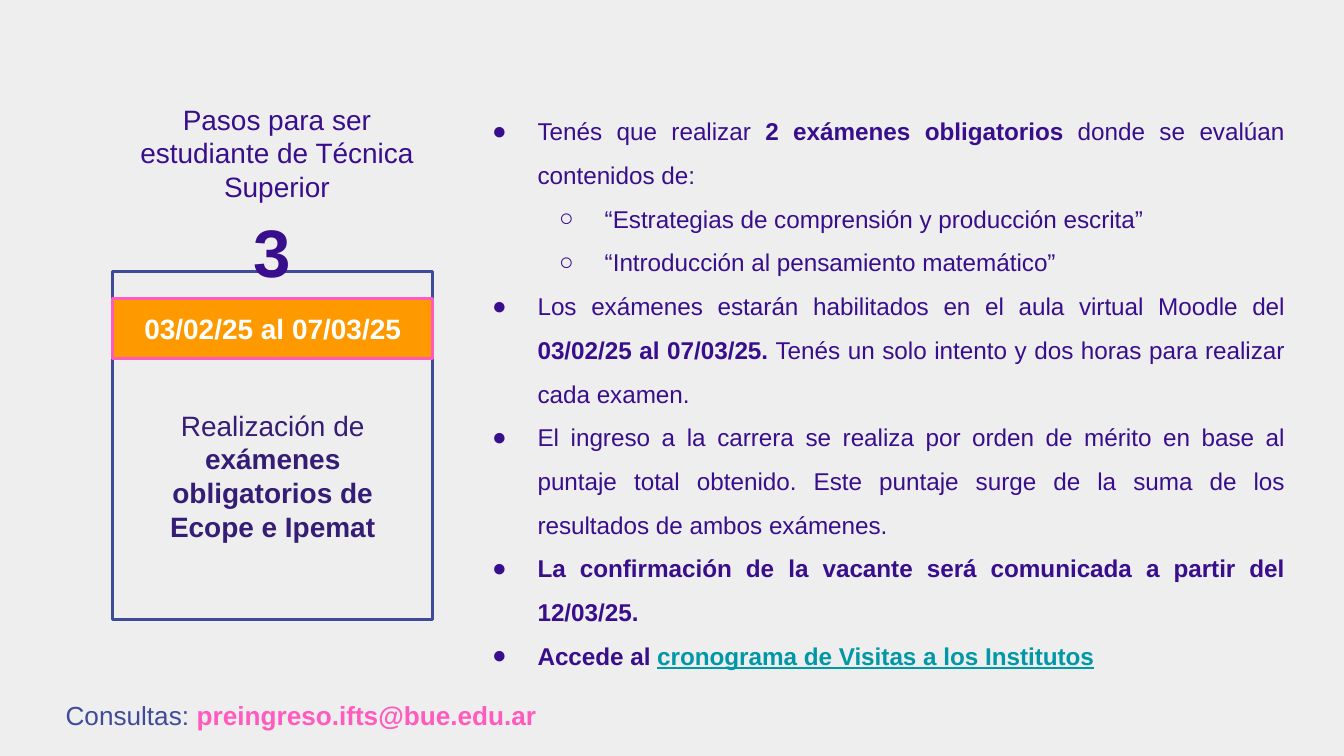
from dataclasses import dataclass

from lxml import etree
from pptx import Presentation
from pptx.dml.color import RGBColor
from pptx.enum import shapes, text
from pptx.oxml import ns
from pptx.util import Cm, Pt


@dataclass(frozen=True)
class Theme:
    font: str = "Arial"
    background: str = "EEEEEE"
    purple: str = "390E8C"
    violet: str = "351C75"
    blue: str = "3F4B99"
    pink: str = "FF5BBE"
    orange: str = "FF9900"
    teal: str = "0097A7"
    white: str = "FFFFFF"
    heading_size: float = 15
    body_size: float = 13
    contact_size: float = 14
    number_size: float = 36
    outline: float = 1.5


@dataclass(frozen=True)
class Box:
    """A region of the slide, in centimetres."""
    left: float
    top: float
    width: float
    height: float

    def inside(self, left, top, width, height):
        return Box(self.left + left, self.top + top, width, height)

    def lengths(self):
        return Cm(self.left), Cm(self.top), Cm(self.width), Cm(self.height)


THEME = Theme()
CENTER = text.PP_ALIGN.CENTER


def add_run(paragraph, words, size, color, bold=False, underline=False):
    run = paragraph.add_run()
    run.text = words
    font = run.font
    font.name = THEME.font
    font.size = Pt(size)
    font.bold = bold
    if underline:
        font.underline = True
    font.color.rgb = RGBColor.from_string(color)


def set_margins(frame):
    frame.word_wrap = True
    frame.margin_left = frame.margin_right = Cm(0.25)
    frame.margin_top = frame.margin_bottom = Cm(0.25)


def add_text_frame(slide, box):
    frame = slide.shapes.add_textbox(*box.lengths()).text_frame
    set_margins(frame)
    return frame


def add_rectangle(slide, box, line, fill=None):
    shape = slide.shapes.add_shape(shapes.MSO_SHAPE.RECTANGLE, *box.lengths())
    shape.shadow.inherit = False
    if fill:
        shape.fill.solid()
        shape.fill.fore_color.rgb = RGBColor.from_string(fill)
    else:
        shape.fill.background()
    shape.line.color.rgb = RGBColor.from_string(line)
    shape.line.width = Pt(THEME.outline)
    return shape


def set_bullet(paragraph, level):
    paragraph.level = level
    properties = paragraph._p.get_or_add_pPr()
    properties.set("marL", str(Cm(1.27 * (level + 1))))
    properties.set("indent", str(Cm(-0.86)))
    color = etree.SubElement(properties, ns.qn("a:buClr"))
    etree.SubElement(color, ns.qn("a:srgbClr"), val=THEME.purple)
    etree.SubElement(properties, ns.qn("a:buFont"), typeface=THEME.font)
    etree.SubElement(properties, ns.qn("a:buChar"), char="●○"[level])


def add_heading(slide, box):
    paragraph = add_text_frame(slide, box).paragraphs[0]
    paragraph.alignment = CENTER
    add_run(paragraph, "Pasos para ser estudiante de Técnica Superior",
            THEME.heading_size, THEME.purple)


def add_details(slide, box, items):
    """Bulleted list; each item is a level and its (words, bold) runs or links."""
    frame = add_text_frame(slide, box)
    for index, (level, runs) in enumerate(items):
        paragraph = frame.add_paragraph() if index else frame.paragraphs[0]
        set_bullet(paragraph, level)
        paragraph.alignment = text.PP_ALIGN.JUSTIFY
        paragraph.line_spacing = 1.5
        for words, style in runs:
            is_link = style == "link"
            add_run(paragraph, words, THEME.body_size,
                    THEME.teal if is_link else THEME.purple,
                    bold=style != "plain", underline=is_link)


def add_step_card(slide, box, number, dates, description):
    """Outlined card with the step number on its top edge and a date band."""
    add_rectangle(slide, box, THEME.blue)

    paragraph = add_text_frame(slide, box.inside(2.42, -1.4, 1.09, 2.06)).paragraphs[0]
    paragraph.alignment = CENTER
    add_run(paragraph, number, THEME.number_size, THEME.purple, bold=True)

    paragraph = add_text_frame(slide, box.inside(0.03, 2.34, 5.99, 3.71)).paragraphs[0]
    paragraph.alignment = CENTER
    for words, bold in description:
        add_run(paragraph, words, THEME.heading_size, THEME.violet, bold)

    band = add_rectangle(slide, box.inside(0, 0.51, box.width, 1.14),
                         THEME.pink, THEME.orange)
    frame = band.text_frame
    set_margins(frame)
    frame.vertical_anchor = text.MSO_ANCHOR.MIDDLE
    paragraph = frame.paragraphs[0]
    paragraph.alignment = CENTER
    add_run(paragraph, dates, THEME.heading_size, THEME.white, bold=True)


def add_contact(slide, box):
    paragraph = add_text_frame(slide, box).paragraphs[0]
    paragraph.line_spacing = 1.15
    add_run(paragraph, "Consultas: ", THEME.contact_size, THEME.blue)
    add_run(paragraph, "preingreso.ifts@bue.edu.ar", THEME.contact_size,
            THEME.pink, bold=True)


DETAILS = [
    (0, [("Tenés que realizar ", "plain"),
         ("2 exámenes obligatorios", "bold"),
         (" donde se evalúan contenidos de:", "plain")]),
    (1, [("“Estrategias de comprensión y producción escrita”", "plain")]),
    (1, [("“Introducción al pensamiento matemático”", "plain")]),
    (0, [("Los exámenes estarán habilitados en el aula virtual Moodle del ", "plain"),
         ("03/02/25 al 07/03/25. ", "bold"),
         ("Tenés un solo intento y dos horas para realizar cada examen.", "plain")]),
    (0, [("El ingreso a la carrera se realiza por orden de mérito en base al "
          "puntaje total obtenido. Este puntaje surge de la suma de los "
          "resultados de ambos exámenes.", "plain")]),
    (0, [("La confirmación de la vacante será comunicada a partir del "
          "12/03/25.", "bold")]),
    (0, [("Accede al ", "bold"),
         ("cronograma de Visitas a los Institutos", "link")]),
]


def main():
    presentation = Presentation()
    presentation.slide_width = Cm(25.4)
    presentation.slide_height = Cm(14.29)
    slide = presentation.slides.add_slide(presentation.slide_layouts[6])
    slide.background.fill.solid()
    slide.background.fill.fore_color.rgb = RGBColor.from_string(THEME.background)

    add_heading(slide, Box(2.24, 1.68, 5.99, 2.44))
    add_details(slide, Box(8.64, 1.68, 15.88, 12.7), DETAILS)
    add_step_card(slide, Box(2.13, 5.13, 6.05, 6.58), "3", "03/02/25 al 07/03/25",
                  [("Realización de ", False),
                   ("exámenes obligatorios de Ecope e Ipemat", True)])
    add_contact(slide, Box(0.99, 12.88, 11.43, 1.12))
    presentation.save("out.pptx")


if __name__ == "__main__":
    main()
